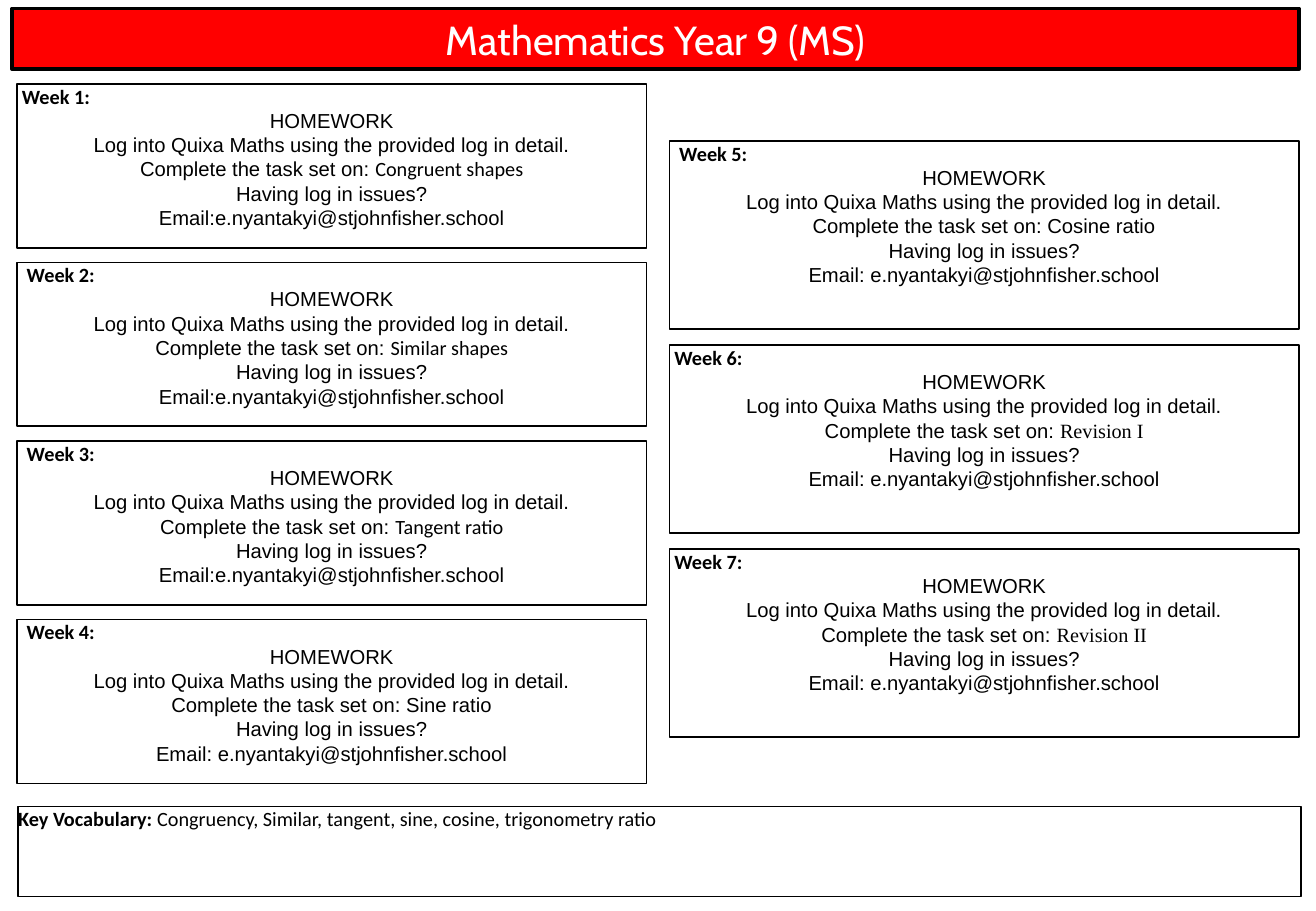
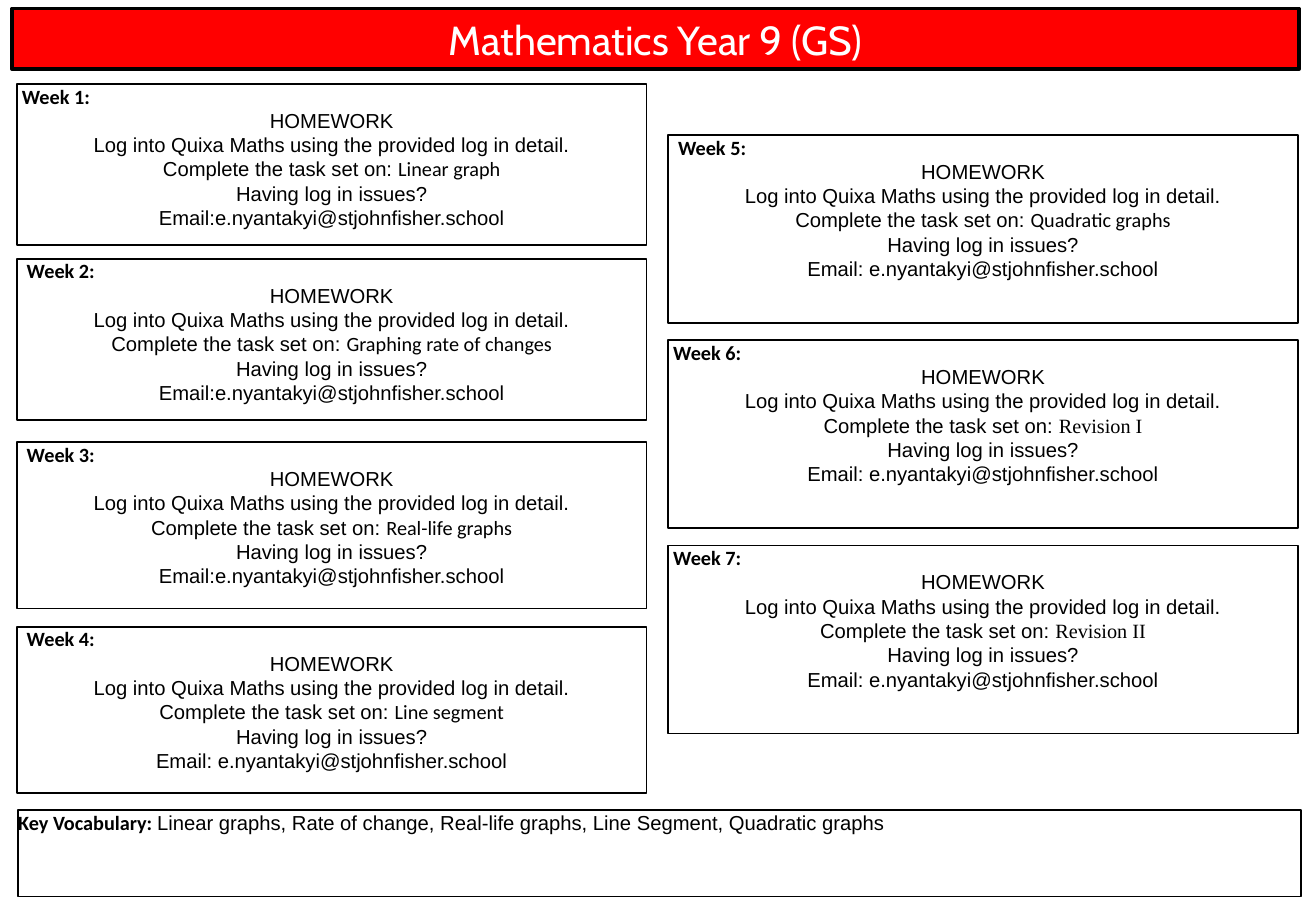
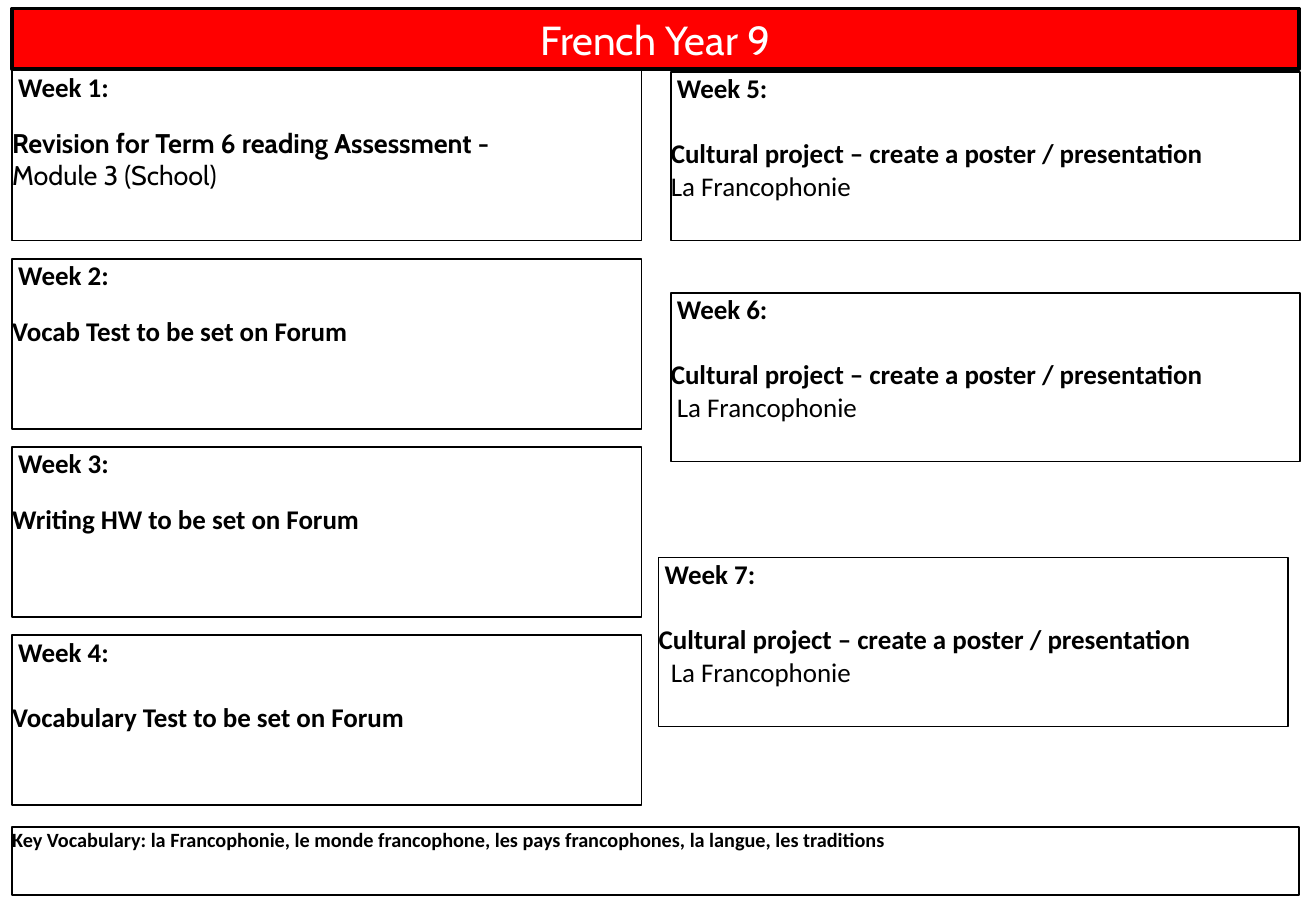
from dataclasses import dataclass

from pptx import Presentation
from pptx.dml.color import RGBColor
from pptx.enum.shapes import MSO_SHAPE as Shape
from pptx.enum.text import MSO_ANCHOR as Anchor, PP_ALIGN as Align
from pptx.util import Inches, Pt


@dataclass(frozen=True)
class Theme:
    """Colours, fonts and type sizes shared by every slide."""

    red: RGBColor = RGBColor(0xFF, 0x00, 0x00)
    black: RGBColor = RGBColor(0x00, 0x00, 0x00)
    white: RGBColor = RGBColor(0xFF, 0xFF, 0xFF)
    display: str = "Cabin"
    label: str = "Calibri"
    body: str = "Arial"
    serif: str = "Times New Roman"
    title_size: float = 24
    french_size: float = 16
    body_size: float = 12
    band_line: float = 2.25
    card_line: float = 1
    paragraph_gap: float = 13.9
    blank_line: float = 19.5


THEME = Theme()
BAND = (0.1, 0.07, 10.59, 0.5)
CARD_WIDTH = 5.18
POSTER = "Cultural project – create a poster / presentation"


@dataclass(frozen=True)
class Line:
    """One paragraph of a French homework card."""

    text: str
    bold: bool = True
    font: str = THEME.label
    indent: float = 0
    before: float = 0


def evenly(first, last, count):
    """Return count equally spaced positions from first to last."""
    step = (last - first) / (count - 1)
    return [round(first + step * index, 2) for index in range(count)]


def column(left, height, tops):
    """Return the boxes of one column of cards."""
    return [(left, top, CARD_WIDTH, height) for top in tops]


def add_panel(slide, box, line_width, fill=None):
    """Draw a black-outlined rectangle and return it."""
    panel = slide.shapes.add_shape(Shape.RECTANGLE, *map(Inches, box))
    panel.shadow.inherit = False
    panel.line.color.rgb = THEME.black
    panel.line.width = Pt(line_width)
    if fill is None:
        panel.fill.background()
    else:
        panel.fill.solid()
        panel.fill.fore_color.rgb = fill
    panel.text_frame.word_wrap = True
    return panel


def add_card(slide, box):
    """Draw an unfilled card and return its text frame without margins."""
    frame = add_panel(slide, box, THEME.card_line).text_frame
    frame.margin_left = frame.margin_right = 0
    frame.margin_top = frame.margin_bottom = 0
    frame.vertical_anchor = Anchor.TOP
    return frame


def write(paragraph, text, font, size, bold=False, color=THEME.black,
          align=Align.LEFT, indent=0, before=0):
    """Fill a paragraph with text in one style and return it."""
    paragraph.alignment = align
    if indent:
        properties = paragraph._p.get_or_add_pPr()
        properties.set("marL", str(Inches(indent)))
        properties.set("indent", "0")
    if before:
        paragraph.space_before = Pt(before)
    paragraph.font.name = font
    paragraph.font.size = Pt(size)
    paragraph.font.bold = bold
    paragraph.font.color.rgb = color
    paragraph.add_run().text = text
    return paragraph


def add_title_band(slide, title):
    """Draw the red title band."""
    frame = add_panel(slide, BAND, THEME.band_line, THEME.red).text_frame
    frame.vertical_anchor = Anchor.MIDDLE
    write(frame.paragraphs[0], title, THEME.display, THEME.title_size,
          color=THEME.white, align=Align.CENTER)


def add_vocabulary(slide, box, words, font=THEME.label, bold=False):
    """Draw the key vocabulary strip."""
    frame = add_card(slide, box)
    paragraph = write(frame.paragraphs[0], "Key Vocabulary: ", THEME.label,
                      THEME.body_size, bold=True)
    terms = paragraph.add_run()
    terms.text = words
    if font != THEME.label:
        terms.font.name = font
    if not bold:
        terms.font.bold = False


def add_maths_card(slide, box, week, topic, topic_font):
    """Draw one week of maths homework."""
    frame = add_card(slide, box)
    write(frame.paragraphs[0], f"Week {week}:", THEME.label, THEME.body_size,
          bold=True, indent=0.04 if week in (1, 6, 7) else 0.08)
    gap = "" if week <= 3 else " "
    task = "Complete the task set on: "
    for text in ("HOMEWORK",
                 "Log into Quixa Maths using the provided log in detail.",
                 task,
                 "Having log in issues?",
                 f"Email:{gap}e.nyantakyi@stjohnfisher.school"):
        paragraph = write(frame.add_paragraph(), text, THEME.body,
                          THEME.body_size, align=Align.CENTER)
        if text == task:
            subject = paragraph.add_run()
            subject.text = topic
            if topic_font != THEME.body:
                subject.font.name = topic_font


def add_french_card(slide, box, week, lines):
    """Draw one week of French homework."""
    frame = add_card(slide, box)
    write(frame.paragraphs[0], f"Week {week}:", THEME.label,
          THEME.french_size, bold=True, indent=0.05)
    for line in lines:
        write(frame.add_paragraph(), line.text, line.font, THEME.french_size,
              bold=line.bold, indent=line.indent, before=line.before)


def add_maths_slide(deck, title, boxes, topics, vocabulary):
    """Build a maths slide from its boxes, topics and vocabulary."""
    slide = deck.slides.add_slide(deck.slide_layouts[6])
    add_title_band(slide, title)
    for week, (box, topic) in enumerate(zip(boxes, topics), 1):
        add_maths_card(slide, box, week, *topic)
    add_vocabulary(slide, *vocabulary)


def add_french_slide(deck, title, boxes, weeks, vocabulary):
    """Build the French slide from its boxes, weeks and vocabulary."""
    slide = deck.slides.add_slide(deck.slide_layouts[6])
    add_title_band(slide, title)
    for week, (box, lines) in enumerate(zip(boxes, weeks), 1):
        add_french_card(slide, box, week, lines)
    add_vocabulary(slide, *vocabulary, bold=True)


def poster_week(indent):
    """Return the lines of a poster project week."""
    return [Line(POSTER, before=THEME.blank_line),
            Line("La Francophonie", bold=False, indent=indent)]


def main():
    """Build and save the three homework slides."""
    deck = Presentation()
    deck.slide_width, deck.slide_height = Inches(10.83), Inches(7.5)
    revision = [("Revision I", THEME.serif), ("Revision II", THEME.serif)]

    add_maths_slide(
        deck, "Mathematics Year 9 (MS)",
        column(0.14, 1.35, evenly(0.69, 5.1, 4))
        + column(5.51, 1.55, evenly(1.16, 4.52, 3)),
        [("Congruent shapes", THEME.label), ("Similar shapes", THEME.label),
         ("Tangent ratio", THEME.label), ("Sine ratio", THEME.body),
         ("Cosine ratio", THEME.body), *revision],
        ((0.15, 6.64, 10.56, 0.74),
         "Congruency, Similar, tangent, sine, cosine, trigonometry ratio"))

    add_maths_slide(
        deck, "Mathematics Year 9 (GS)",
        column(0.14, 1.33, (0.69, 2.13)) + column(0.14, 1.37, (3.64, 5.16))
        + column(5.5, 1.55, evenly(1.11, 4.49, 3)),
        [("Linear graph", THEME.label),
         ("Graphing rate of changes", THEME.label),
         ("Real-life graphs", THEME.label), ("Line segment", THEME.label),
         ("Quadratic graphs", THEME.label), *revision],
        ((0.15, 6.67, 10.56, 0.71),
         "Linear graphs, Rate of change, Real-life graphs, Line Segment, "
         "Quadratic graphs", THEME.body))

    add_french_slide(
        deck, "French Year 9",
        column(0.1, 1.4, evenly(0.58, 5.23, 4))
        + column(5.52, 1.39, (0.59, 2.41)) + column(5.42, 1.39, (4.59,)),
        [[Line("Revision for Term 6 reading Assessment -",
               font=THEME.display, before=THEME.paragraph_gap),
          Line("Module 3 (School)", bold=False, font=THEME.display)],
         [Line("Vocab Test to be set on Forum", before=THEME.paragraph_gap)],
         [Line("Writing HW to be set on Forum", before=THEME.paragraph_gap)],
         [Line("Vocabulary Test to be set on Forum",
               before=THEME.blank_line)],
         *map(poster_week, (0, 0.05, 0.1))],
        ((0.1, 6.81, 10.59, 0.56),
         "la Francophonie, le monde francophone, les pays francophones, "
         "la langue, les traditions"))

    deck.save("out.pptx")


if __name__ == "__main__":
    main()
